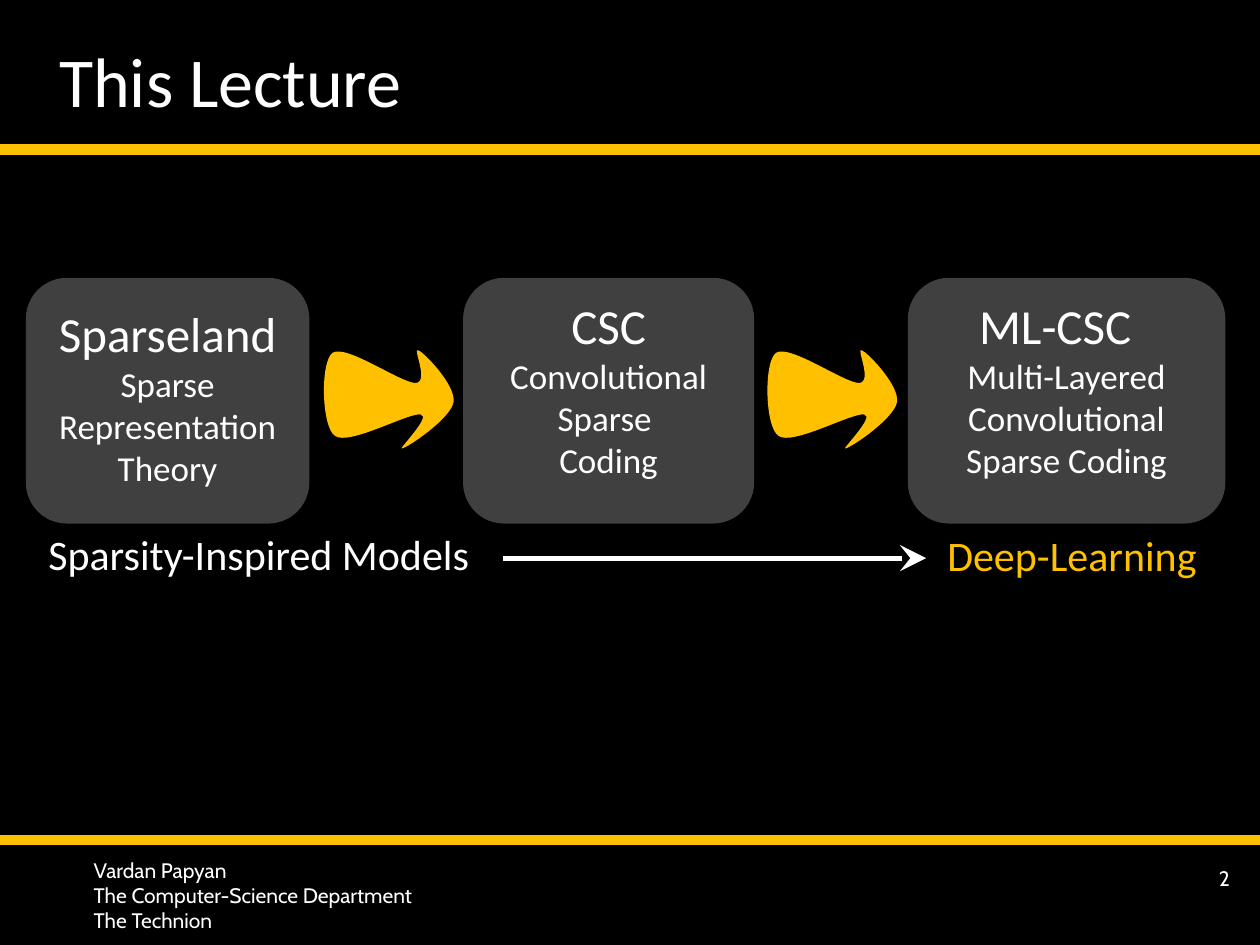
"""Build the lecture outline slide: three models, flow arrows and a footer."""
from dataclasses import dataclass

from lxml import etree
from pptx import Presentation
from pptx import util as u
from pptx.dml.color import RGBColor
from pptx.enum import shapes, text
from pptx.oxml.ns import qn

BLACK = RGBColor(0x00, 0x00, 0x00)
WHITE = RGBColor(0xFF, 0xFF, 0xFF)
GOLD = RGBColor(0xFF, 0xC0, 0x00)
GREY = RGBColor(0x40, 0x40, 0x40)

COLS, ROWS = 100, 75
CELL = u.Inches(0.1)
TOP, HIGH = 22.05, 19.5
SWOOSH = [
    (1, 0.7), (2.1, 0, 6.4, 3.1, 7.6, 3.1), (8.7, 3, 7.3, 0.2, 7.8, 0.5),
    (8.3, 0.7, 10.8, 3.3, 10.6, 4.6), (10.4, 5.9, 7, 8.2, 6.5, 8.3),
    (6.1, 8.5, 8.9, 5.7, 8, 5.6), (7.1, 5.4, 2.3, 8.1, 1.2, 7.3),
    (0.1, 6.6, 0, 1.4, 1, 0.7),
]


@dataclass
class Card:
    """A model box, with lengths in grid cells."""
    left: float
    wide: float
    name: str
    body: str
    low: float
    shift: float = 0


@dataclass
class Label:
    """A free line or block of text, with lengths in grid cells."""
    left: float
    top: float
    wide: float
    high: float
    words: str
    size: int
    font: str
    color: RGBColor = WHITE
    align: text.PP_ALIGN = text.PP_ALIGN.LEFT


CARDS = [
    Card(2.05, 22.5, "Sparseland", "Sparse Representation Theory", 1.2),
    Card(36.75, 23.1, "CSC", "Convolutional Sparse \vCoding", 2.5),
    Card(72.05, 25.2, "ML-CSC", "Multi-Layered Convolutional Sparse Coding", 2.5, 1.8),
]
LABELS = [
    Label(2.85, 41.45, 93.8, 5, "Sparsity-Inspired Models", 24, "Calibri"),
    Label(74.2, 41.5, 23, 5, "Deep-Learning", 24, "Calibri", GOLD),
    Label(6.45, 67.55, 44.9, 7.5,
          "Vardan Papyan\nThe Computer-Science Department\nThe Technion", 12, "Cabin"),
    Label(77.8, 68.2, 20.8, 5, "2", 12, "Cabin", align=text.PP_ALIGN.RIGHT),
]


def span(*cells: float) -> list[int]:
    """Turn grid cells into slide lengths."""
    return [round(c * CELL) for c in cells]


def style(para, size: int, font: str, color: RGBColor, align) -> None:
    """Format a paragraph and its runs."""
    para.alignment = align
    for run in para.runs:
        run.font.size, run.font.name = u.Pt(size), font
        run.font.color.rgb = color


def paint(shape, color: RGBColor) -> None:
    """Give a shape a plain fill with no line or shadow."""
    shape.shadow.inherit = False
    shape.fill.solid()
    shape.fill.fore_color.rgb = color
    shape.line.fill.background()


def add_title(slide, words: str) -> None:
    """Place and format the title placeholder."""
    title = slide.shapes.title
    title.left, title.top, title.width, title.height = span(0, 1.7, 98.7, 9.3)
    frame = title.text_frame
    frame.text = words
    frame.margin_left = span(4.7)[0]
    frame.auto_size = text.MSO_AUTO_SIZE.NONE
    frame.vertical_anchor = text.MSO_ANCHOR.MIDDLE
    style(frame.paragraphs[0], 40, "Calibri", WHITE, text.PP_ALIGN.LEFT)


def add_card(slide, card: Card) -> None:
    """Draw a rounded model box with its name and meaning."""
    box = slide.shapes.add_shape(
        shapes.MSO_SHAPE.ROUNDED_RECTANGLE, *span(card.left, TOP, card.wide, HIGH))
    paint(box, GREY)
    frame = box.text_frame
    frame.word_wrap = True
    frame.vertical_anchor = text.MSO_ANCHOR.MIDDLE
    frame.margin_right, frame.margin_bottom = span(1 + card.shift, card.low)
    frame.text = f"{card.name}\n{card.body}"
    for para, size in zip(frame.paragraphs, (28, 20)):
        style(para, size, "Calibri", WHITE, text.PP_ALIGN.CENTER)
    if card.shift:
        props = frame.paragraphs[1]._p.get_or_add_pPr()
        props.set("marL", str(span(card.shift)[0]))
        props.set("indent", "0")


def add_label(slide, label: Label) -> None:
    """Draw a text box."""
    box = slide.shapes.add_textbox(*span(label.left, label.top, label.wide, label.high))
    frame = box.text_frame
    frame.word_wrap = True
    frame.text = label.words
    for para in frame.paragraphs:
        style(para, label.size, label.font, label.color, label.align)


def add_line(slide, left: float, right: float, row: float, color: RGBColor,
             width: float, tip: str = "") -> None:
    """Draw a level line, with a large arrowhead if a tip is named."""
    line = slide.shapes.add_connector(
        shapes.MSO_CONNECTOR.STRAIGHT, *span(left, row, right, row))
    line.line.color.rgb = color
    line.line.width = u.Pt(width)
    if tip:
        etree.SubElement(line.line._get_or_add_ln(), qn("a:tailEnd"),
                         type=tip, w="lg", len="lg")
    etree.SubElement(line._element.spPr, qn("a:effectLst"))


def add_swoosh(slide, left: float, top: float) -> None:
    """Draw the curved arrow as a freeform with cubic segments."""
    ends = [span(left + x, top + y) for *_, x, y in SWOOSH]
    pen = slide.shapes.build_freeform(*ends[0])
    pen.add_line_segments(ends[1:], close=True)
    shape = pen.convert_to_shape()
    paint(shape, GOLD)
    base = span(left, top)
    edge = (shape.left - base[0], shape.top - base[1])
    lines = list(shape._element.iter(qn("a:lnTo")))
    for line, curve in zip(lines, SWOOSH[1:]):
        line.tag = qn("a:cubicBezTo")
        line.clear()
        for x, y in zip(span(*curve[::2]), span(*curve[1::2])):
            etree.SubElement(line, qn("a:pt"), x=str(x - edge[0]), y=str(y - edge[1]))


def main() -> None:
    """Build and save the slide."""
    deck = Presentation()
    deck.slide_width, deck.slide_height = span(COLS, ROWS)
    slide = deck.slides.add_slide(deck.slide_layouts[5])
    slide.background.fill.solid()
    slide.background.fill.fore_color.rgb = BLACK
    add_title(slide, "This Lecture")
    for row in (11.85, 66.65):
        add_line(slide, 0, COLS, row, GOLD, 6)
    for card in CARDS:
        add_card(slide, card)
    for left in (25.4, 60.6):
        add_swoosh(slide, left, 27.3)
    add_line(slide, 39.9, 73.5, 44.3, WHITE, 3, "stealth")
    for label in LABELS:
        add_label(slide, label)
    deck.save("out.pptx")


if __name__ == "__main__":
    main()
